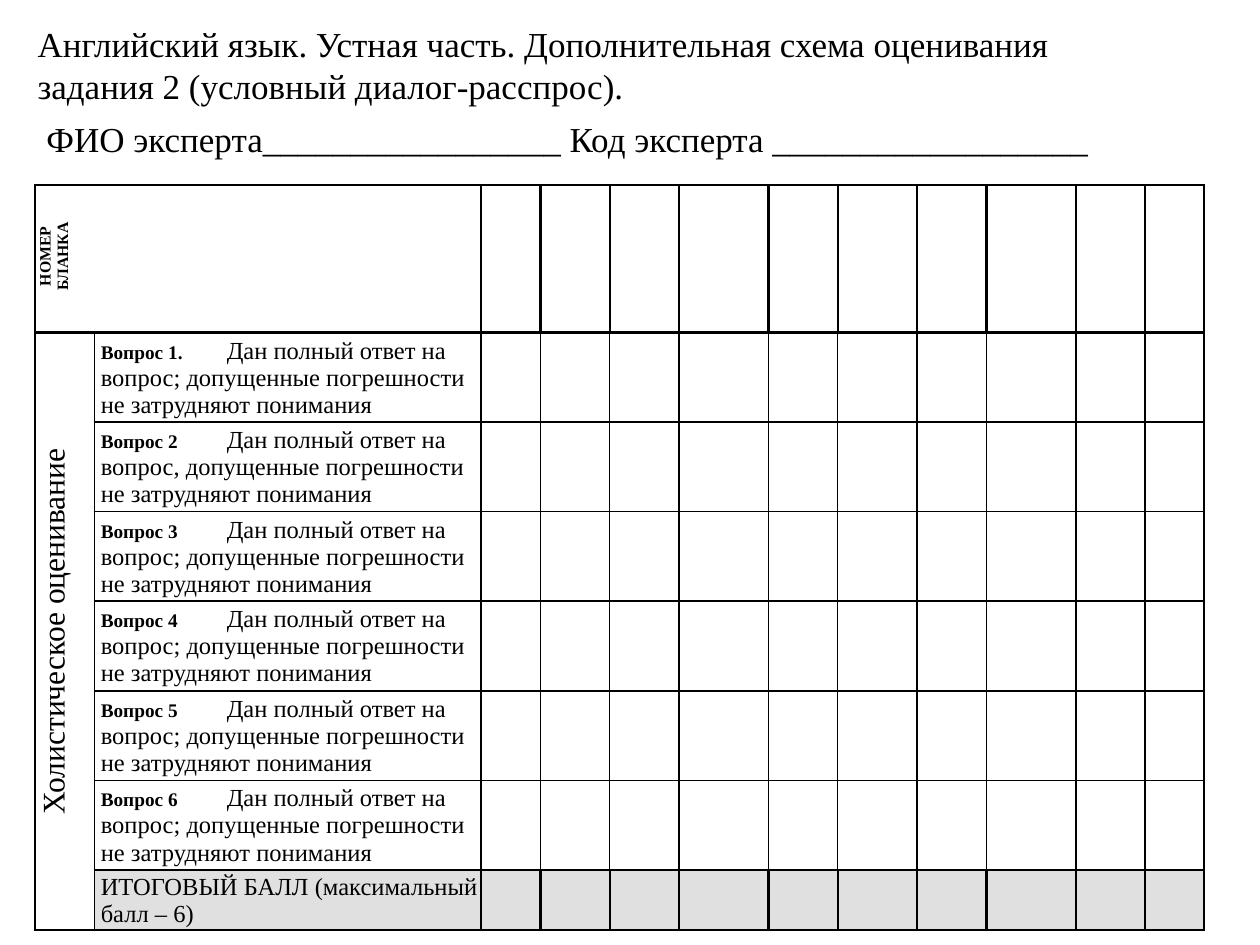
from lxml.etree import SubElement
from pptx import Presentation
from pptx.dml.color import RGBColor
from pptx.enum.text import MSO_ANCHOR, PP_ALIGN
from pptx.oxml.ns import qn
from pptx.util import Inches, Pt

FONT, BLACK, GREY = "Times New Roman", "000000", "E0E0E0"

HEADING = ("Английский язык. Устная часть. Дополнительная схема оценивания "
           "задания 2 (условный диалог-расспрос).")
EXPERT = "ФИО эксперта_________________ Код эксперта __________________"
FORM_NUMBER = ("НОМЕР", "БЛАНКА")
SCALE = "Холистическое оценивание"
# label, mark after "вопрос", position of the answer text in inches
QUESTIONS = [
    ("Вопрос 1.", ";", 0.81),
    ("Вопрос 2", ",", 0.81),
    ("Вопрос 3", ";", 0.77),
    ("Вопрос 4", ";", 0.73),
    ("Вопрос 5", ";", 0.73),
    ("Вопрос 6", ";", 0.73),
]
CRITERION = "Дан полный ответ на вопрос{} допущенные погрешности не затрудняют понимания"
TOTAL = "ИТОГОВЫЙ БАЛЛ (максимальный балл – 6)"

COLUMNS = [0.47, 3.07, 0.47, 0.55, 0.55, 0.71, 0.55, 0.63, 0.55, 0.71, 0.55, 0.47]
ROWS = [1.17] + [0.71] * len(QUESTIONS) + [0.47]
LAST_ROW, LAST_COLUMN = len(ROWS) - 1, len(COLUMNS) - 1


def color(value):
    return RGBColor.from_string(value)


def add_run(paragraph, text, size, bold=False):
    run = paragraph.add_run()
    run.text = text
    run.font.name = FONT
    run.font.size = Pt(size)
    run.font.bold = bold
    run.font.color.rgb = color(BLACK)


def indent(paragraph, inches):
    properties = paragraph._p.get_or_add_pPr()
    properties.set("marL", str(Inches(inches)))
    properties.set("indent", "0")
    return properties


def set_borders(cell, row, column):
    """Thick lines frame the table, its header and its score columns."""
    def vertical(edge):
        return edge in (0, 2, LAST_COLUMN + 1) or row == 0 or (row == LAST_ROW and edge > 1)

    def horizontal(edge):
        return edge in (0, 1, LAST_ROW + 1) or column == 0

    sides = {"L": vertical(column), "R": vertical(column + 1),
             "T": horizontal(row), "B": horizontal(row + 1)}
    for side, thick in sides.items():
        line = SubElement(cell._tc.get_or_add_tcPr(), qn("a:ln" + side),
                          w=str(Pt(1.5 if thick else 1)))
        SubElement(SubElement(line, qn("a:solidFill")), qn("a:srgbClr"), val=BLACK)


def prepare_text(cell, anchor=MSO_ANCHOR.MIDDLE, turned=False):
    cell.margin_left = cell.margin_right = cell.margin_top = Inches(0.01)
    cell.margin_bottom = 0
    cell.vertical_anchor = anchor
    paragraph = cell.text_frame.paragraphs[0]
    if turned:
        cell._tc.tcPr.set("vert", "vert270")
        paragraph.alignment = PP_ALIGN.CENTER
    return paragraph


presentation = Presentation()
presentation.slide_width, presentation.slide_height = Inches(10), Inches(7.5)
slide = presentation.slides.add_slide(presentation.slide_layouts[6])

title = slide.shapes.add_textbox(Inches(0.2), Inches(0.13), Inches(9.06), Inches(1.19)).text_frame
title.word_wrap = True
heading = title.paragraphs[0]
heading.space_after = Pt(6)
add_run(heading, HEADING, 20)
expert = title.add_paragraph()
indent(expert, 0.07)
add_run(expert, EXPERT, 20)

table = slide.shapes.add_table(len(ROWS), len(COLUMNS), Inches(0.28), Inches(1.47),
                               Inches(sum(COLUMNS)), Inches(sum(ROWS))).table
table.first_row = table.horz_banding = False
for column, width in zip(table.columns, COLUMNS):
    column.width = Inches(width)
for row, height in zip(table.rows, ROWS):
    row.height = Inches(height)

for r in range(len(ROWS)):
    for c in range(len(COLUMNS)):
        cell = table.cell(r, c)
        set_borders(cell, r, c)
        if r == LAST_ROW and c > 0:
            cell.fill.solid()
            cell.fill.fore_color.rgb = color(GREY)
        else:
            cell.fill.background()

table.cell(0, 0).merge(table.cell(0, 1))
table.cell(1, 0).merge(table.cell(LAST_ROW, 0))

form_number = prepare_text(table.cell(0, 0), MSO_ANCHOR.BOTTOM, turned=True)
indent(form_number, 0.04)
add_run(form_number, FORM_NUMBER[0], 9, bold=True)
form_number.add_line_break()
add_run(form_number, FORM_NUMBER[1], 9, bold=True)

add_run(prepare_text(table.cell(1, 0), turned=True), SCALE, 18)

for r, (label, mark, answer_position) in enumerate(QUESTIONS, start=1):
    question = prepare_text(table.cell(r, 1))
    tabs = SubElement(indent(question, 0.04), qn("a:tabLst"))
    SubElement(tabs, qn("a:tab"), pos=str(Inches(answer_position)), algn="l")
    add_run(question, label + "\t", 11, bold=True)
    add_run(question, CRITERION.format(mark), 14)

total = prepare_text(table.cell(LAST_ROW, 1))
indent(total, 0.04)
add_run(total, TOTAL, 14)

presentation.save("out.pptx")
